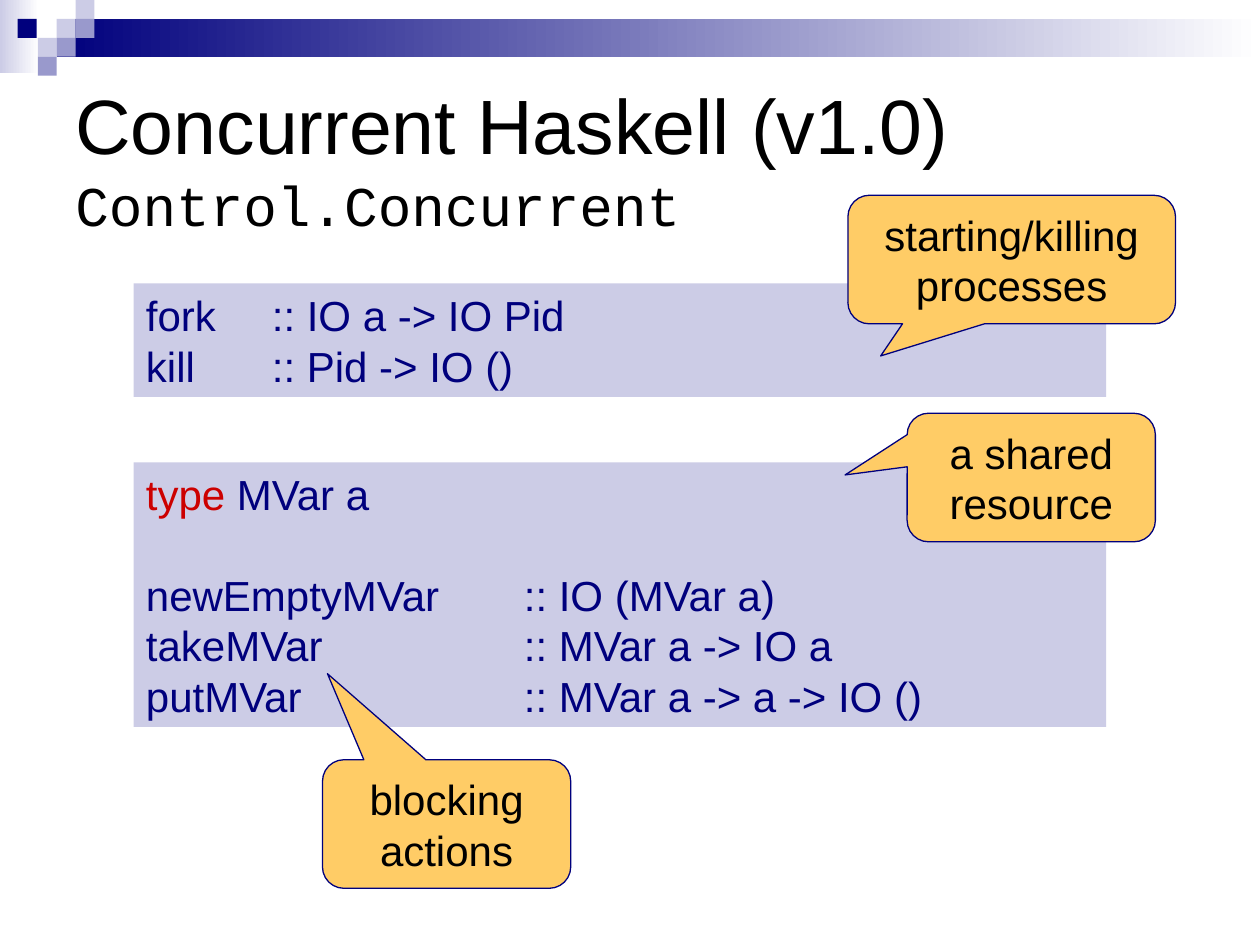
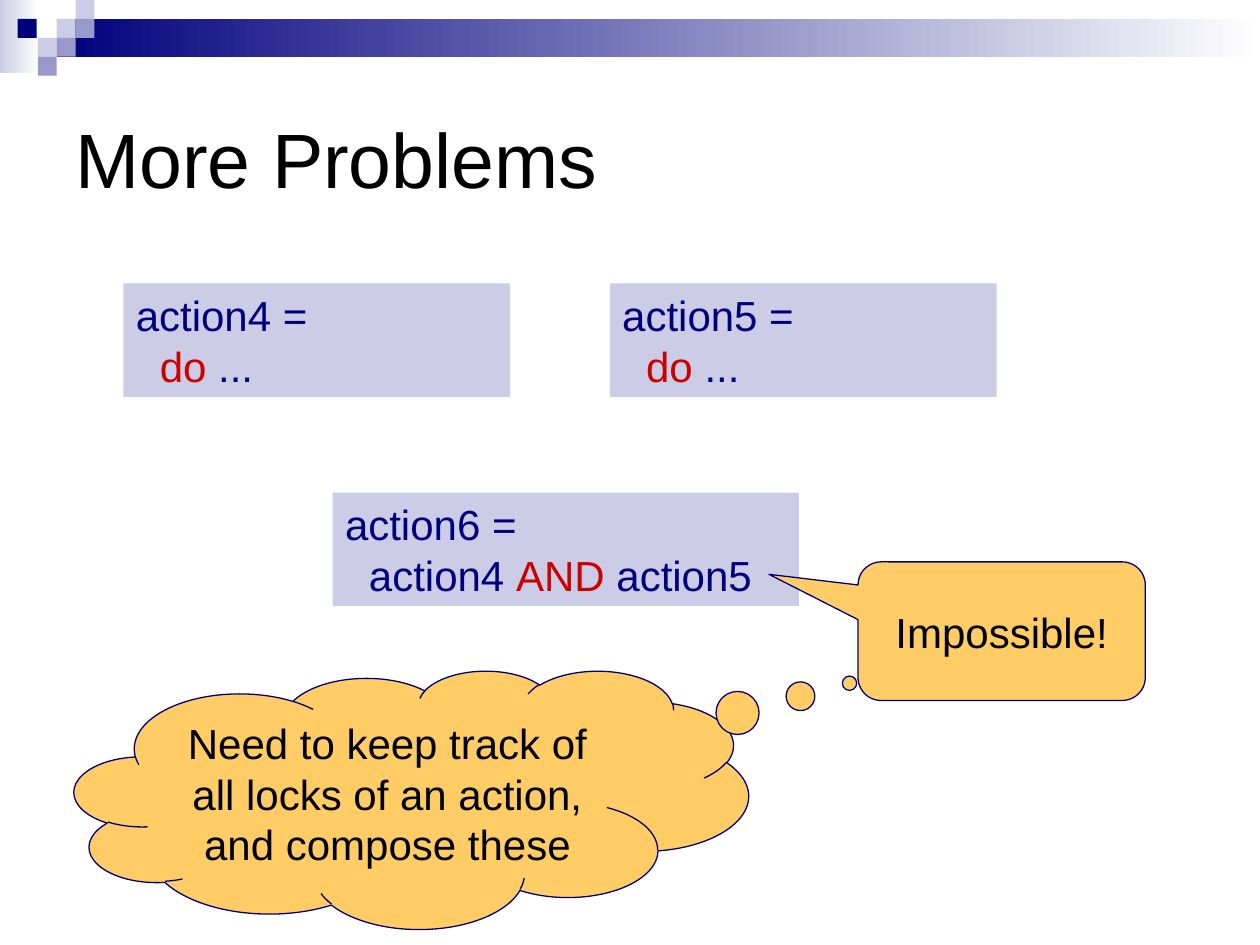
from lxml import etree
from pptx import Presentation
from pptx.dml.color import RGBColor
from pptx.enum.shapes import MSO_SHAPE
from pptx.enum.text import MSO_ANCHOR, PP_ALIGN
from pptx.oxml.ns import qn
from pptx.util import Inches, Pt

RECTANGLE = MSO_SHAPE.RECTANGLE
ROUND_CALLOUT = MSO_SHAPE.ROUNDED_RECTANGULAR_CALLOUT
CLOUD_CALLOUT = MSO_SHAPE.CLOUD_CALLOUT
MIDDLE, TOP = MSO_ANCHOR.MIDDLE, MSO_ANCHOR.TOP
LEFT, CENTER = PP_ALIGN.LEFT, PP_ALIGN.CENTER

COLORS = {
    "navy": "00007D",
    "violet": "9999CC",
    "lavender": "CCCCE6",
    "white": "FFFFFF",
    "black": "000000",
    "keyword": "CC0000",
    "callout": "FFCC66",
}
SQUARE = 0.15
HEADER_SQUARES = [
    (0.45, 0.15, "lavender"),
    (0.6, 0, "lavender"),
    (0.6, 0.15, "violet"),
    (0.3, 0.3, "lavender"),
    (0.14, 0.15, "navy"),
    (0.45, 0.3, "violet"),
    (0.3, 0.45, "violet"),
]
BODY_SIZE = 24
BLANK_LINE = Pt(28.8)
CODE_INDENT = Inches(0.19)


def color(name):
    return RGBColor.from_string(COLORS[name])


class Deck:
    """Holds the shared style and the slide being built."""

    def __init__(self):
        self.presentation = Presentation()
        self.presentation.slide_width = Inches(10)
        self.presentation.slide_height = Inches(7.5)
        self.slide = None

    def start_slide(self, title, subtitle=None):
        layout = self.presentation.slide_layouts[6]
        self.slide = self.presentation.slides.add_slide(layout)
        self.header()
        self.title(title, subtitle)

    def shape(self, kind, box, fill=None, line=None):
        shape = self.slide.shapes.add_shape(kind, *map(Inches, box))
        shape.shadow.inherit = False
        if fill:
            shape.fill.solid()
            shape.fill.fore_color.rgb = color(fill)
        if line:
            shape.line.color.rgb = color(line)
            shape.line.width = Pt(0.75)
        else:
            shape.line.fill.background()
        return shape

    def fading_band(self, box, start):
        """Rectangle that fades to white from left to right."""
        fill = self.shape(RECTANGLE, box).fill
        fill.gradient()
        fill.gradient_angle = 0
        for stop, name, position in zip(fill.gradient_stops, (start, "white"), (0, 1)):
            stop.color.rgb = color(name)
            stop.position = position

    def header(self):
        self.fading_band((0, 0, 0.31, 0.58), "lavender")
        self.fading_band((0.45, 0.15, 9.55, 0.3), "navy")
        for left, top, fill in HEADER_SQUARES:
            self.shape(RECTANGLE, (left, top, SQUARE, SQUARE), fill)

    def format_run(self, run, name, size=BODY_SIZE, font="Arial"):
        run.font.name = font
        run.font.size = Pt(size)
        run.font.color.rgb = color(name)

    def title(self, title, subtitle):
        box = self.slide.shapes.add_textbox(*map(Inches, (0.5, 0.5, 9, 1.5)))
        frame = box.text_frame
        frame.word_wrap = True
        frame.vertical_anchor = MIDDLE
        paragraph = frame.paragraphs[0]
        paragraph.text = f"{title}\v{subtitle}" if subtitle else title
        self.format_run(paragraph.runs[0], "black", 44)
        for run in paragraph.runs[1:]:
            self.format_run(run, "black", 32, "Courier New")

    def code(self, box, lines, tab=None, indented=(), gap_before=None):
        """Code panel; words between asterisks are keywords."""
        frame = self.shape(RECTANGLE, box, "lavender").text_frame
        frame.word_wrap = True
        frame.vertical_anchor = TOP
        for index, line in enumerate(lines):
            paragraph = frame.add_paragraph() if index else frame.paragraphs[0]
            paragraph.alignment = LEFT
            for position, text in enumerate(line.split("*")):
                if text:
                    run = paragraph.add_run()
                    run.text = text
                    self.format_run(run, "keyword" if position % 2 else "navy")
            if index == gap_before:
                paragraph.space_before = BLANK_LINE
            properties = paragraph._p.get_or_add_pPr()
            if index in indented:
                properties.set("marL", str(CODE_INDENT))
            if tab:
                tabs = etree.SubElement(properties, qn("a:tabLst"))
                etree.SubElement(tabs, qn("a:tab"), pos=str(Inches(tab)), algn="l")

    def callout(self, box, text, pointer, kind=ROUND_CALLOUT):
        """Callout whose pointer is an offset from its centre, in shares of its size."""
        shape = self.shape(kind, box, "callout", "navy")
        shape.adjustments[0], shape.adjustments[1] = pointer
        frame = shape.text_frame
        frame.text = text
        frame.word_wrap = True
        frame.vertical_anchor = MIDDLE
        paragraph = frame.paragraphs[0]
        paragraph.alignment = CENTER
        self.format_run(paragraph.runs[0], "black")


def concurrent_haskell(deck):
    deck.start_slide("Concurrent Haskell (v1.0)", "Control.Concurrent")
    deck.code((1.06, 2.25, 7.72, 0.9),
              ["fork\t:: IO a -> IO Pid", "kill\t:: Pid -> IO ()"], tab=1)
    deck.code((1.06, 3.67, 7.72, 2.1),
              ["*type* MVar a",
               "newEmptyMVar\t:: IO (MVar a)",
               "takeMVar\t:: MVar a -> IO a",
               "putMVar\t:: MVar a -> a -> IO ()"],
              tab=3, gap_before=1)
    deck.callout((6.73, 1.55, 2.6, 1.02), "starting/killing processes", (-0.4, 0.75))
    deck.callout((7.2, 3.28, 1.97, 1.02), "a shared resource", (-0.75, -0.02))
    deck.callout((2.56, 6.03, 1.97, 1.02), "blocking actions", (-0.48, -1.17))


def more_problems(deck):
    deck.start_slide("More Problems")
    for left, name in ((0.98, "action4"), (4.84, "action5")):
        deck.code((left, 2.25, 3.07, 0.9), [f"{name} =", "*do* ..."], indented=(1,))
    deck.code((2.64, 3.91, 3.7, 0.9),
              ["action6 =", "action4 *AND* action5"], indented=(1,))
    deck.callout((6.81, 4.46, 2.28, 1.1), "Impossible!", (-0.81, -0.41))
    deck.callout((0.59, 5.32, 5.35, 2.05),
                 "Need to keep track of all locks of an action, and compose these",
                 (0.65, -0.45), CLOUD_CALLOUT)


def main():
    deck = Deck()
    concurrent_haskell(deck)
    more_problems(deck)
    deck.presentation.save("out.pptx")


if __name__ == "__main__":
    main()
